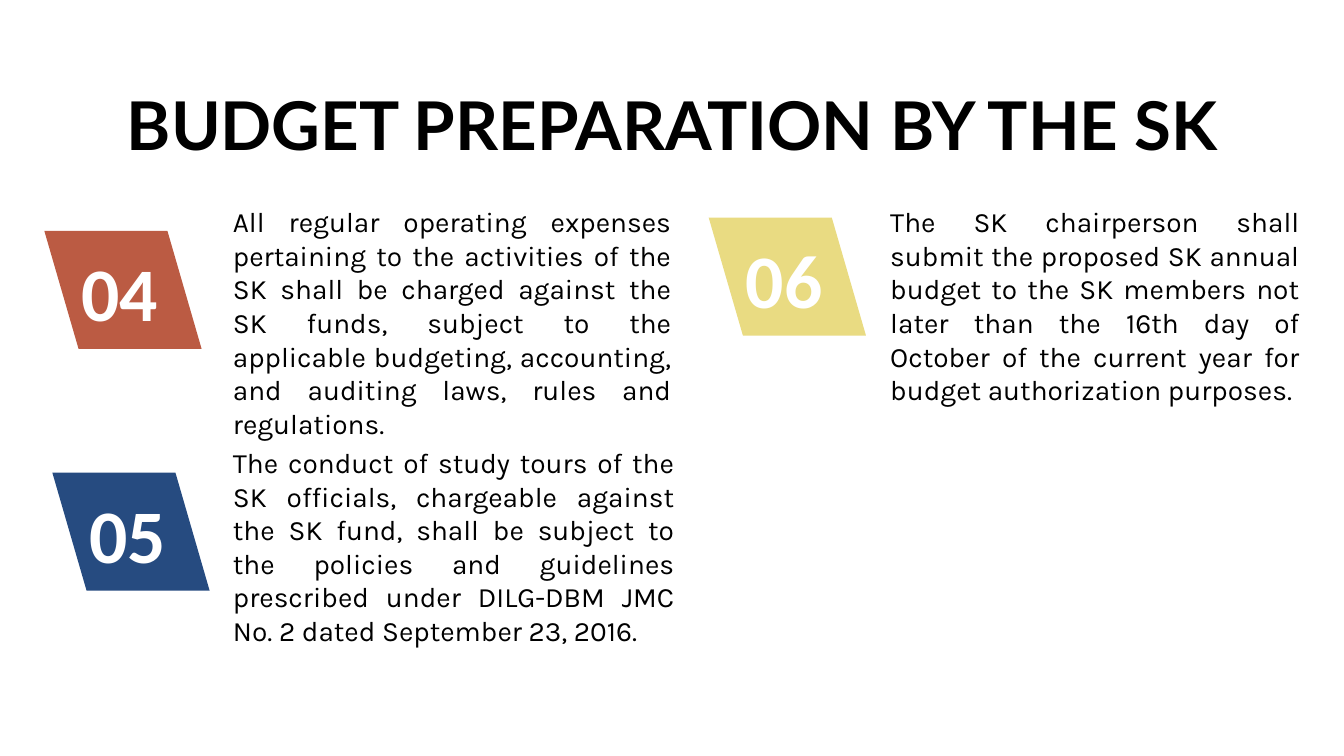
from pptx import Presentation
from pptx.dml.color import RGBColor
from pptx.enum.shapes import MSO_SHAPE
from pptx.enum.text import MSO_ANCHOR, PP_ALIGN
from pptx.util import Inches, Pt

BLACK = RGBColor(0x00, 0x00, 0x00)
WHITE = RGBColor(0xFF, 0xFF, 0xFF)
RUST = RGBColor(0xBB, 0x5B, 0x43)
NAVY = RGBColor(0x26, 0x4B, 0x80)
SAND = RGBColor(0xE9, 0xDB, 0x82)

TITLE = {"name": "Lato", "size": Pt(48), "bold": True}
BODY = {"name": "Karla", "size": Pt(20), "bold": False}
NUMBER = {"name": "Calibri", "size": Pt(54), "bold": True}

RULES = [
    ("04", RUST, (0.44, 2.29), (2.31, 1.98, 4.35, 1.78),
     "All regular operating expenses pertaining to the activities of the SK "
     "shall be charged against the SK funds, subject to the applicable "
     "budgeting, accounting, and auditing laws, rules and regulations."),
    ("05", NAVY, (0.52, 4.69), (2.31, 4.37, 4.38, 1.78),
     "The conduct of study tours of the SK officials, chargeable against the "
     "SK fund, shall be subject to the policies and guidelines prescribed "
     "under DILG-DBM JMC No. 2 dated September 23, 2016."),
    ("06", SAND, (7.03, 2.16), (8.83, 1.98, 4.06, 1.78),
     "The SK chairperson shall submit the proposed SK annual budget to the SK "
     "members not later than the 16th day of October of the current year for "
     "budget authorization purposes."),
]


class BudgetSlide:
    badge_size = (1.56, 1.17)
    slant = 0.29

    def __init__(self, deck):
        self.slide = deck.slides.add_slide(deck.slide_layouts[6])

    def fill_text(self, shape, text, style, color, align, anchor, insets):
        frame = shape.text_frame
        frame.word_wrap = True
        frame.vertical_anchor = anchor
        for side, inset in zip(("left", "top", "right", "bottom"), insets):
            setattr(frame, f"margin_{side}", Inches(inset))
        paragraph = frame.paragraphs[0]
        paragraph.alignment = align
        run = paragraph.add_run()
        run.text = text
        for attribute, value in style.items():
            setattr(run.font, attribute, value)
        run.font.color.rgb = color

    def badge(self, number, color, corner):
        shape = self.slide.shapes.add_shape(
            MSO_SHAPE.PARALLELOGRAM, *map(Inches, corner + self.badge_size))
        shape.adjustments[0] = self.slant
        shape.element.spPr.xfrm.set("flipH", "1")
        shape.shadow.inherit = False
        shape.fill.solid()
        shape.fill.fore_color.rgb = color
        shape.line.fill.background()
        self.fill_text(shape, number, NUMBER, WHITE, PP_ALIGN.LEFT,
                       MSO_ANCHOR.BOTTOM, (0.1, 0.85, 0.1, 0.05))

    def text(self, text, box, style, align, anchor, insets):
        shape = self.slide.shapes.add_textbox(*map(Inches, box))
        self.fill_text(shape, text, style, BLACK, align, anchor, insets)


def main():
    deck = Presentation()
    deck.slide_width = Inches(13.33)
    deck.slide_height = Inches(7.5)
    page = BudgetSlide(deck)
    page.text("BUDGET PREPARATION BY THE SK", (0.17, 0.55, 13, 1.36), TITLE,
              PP_ALIGN.CENTER, MSO_ANCHOR.MIDDLE, (0.07, 0.04, 0.07, 0.04))
    for number, color, corner, box, rule in RULES:
        page.badge(number, color, corner)
        page.text(rule, box, BODY, PP_ALIGN.JUSTIFY, MSO_ANCHOR.TOP,
                  (0, 0.05, 0, 0.05))
    deck.save("out.pptx")


if __name__ == "__main__":
    main()
